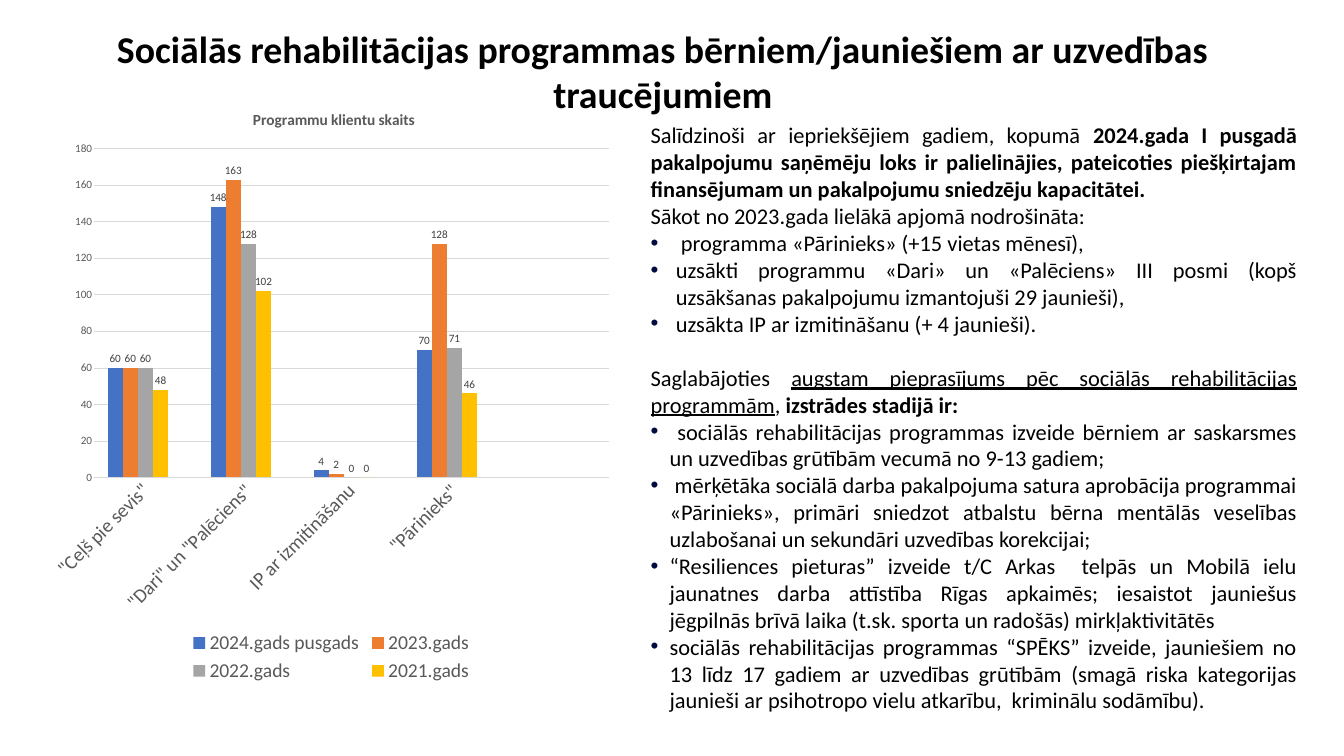
from lxml import etree
from pptx import Presentation
from pptx.chart.data import CategoryChartData
from pptx.dml.color import RGBColor
from pptx.enum import chart as kinds, text
from pptx.oxml import ns
from pptx.util import Pt

FONT = "Calibri"
COLOURS = {"ink": "000000", "bullet": "000B40", "grey": "595959", "label": "404040",
           "grid": "D9D9D9"}
PAGE_SIZE = (1920, 1080)
TITLE_BOX = (96, 32.4, 1702, 138.2)
BODY_BOX = (922.3, 169.9, 938.2, 887)
CHART_BOX = (59.8, 126.7, 826.6, 854.6)
BODY_SIZE = 32
LINE_HEIGHT = 39

TITLE = "Sociālās rehabilitācijas programmas bērniem/jauniešiem ar uzvedības traucējumiem"
CHART_TITLE = "Programmu klientu skaits"
CATEGORIES = ['"Ceļš pie sevis"', '"Dari" un "Palēciens"', "IP ar izmitināšanu", '"Pārinieks"', ""]
SERIES = [
    ("2024.gads pusgads", [60, 148, 4, 70, None], "4472C4"),
    ("2023.gads", [60, 163, 2, 128, None], "ED7D31"),
    ("2022.gads", [60, 128, 0, 71, None], "A5A5A5"),
    ("2021.gads", [48, 102, 0, 46, None], "FFC000"),
    ("", [None] * 5, "5B9BD5"),
]
TITLE_PLACE = {"x": 0.36, "y": 0.03}
PLOT_PLACE = {"x": 0.09, "y": 0.1, "w": 0.89, "h": 0.55}
LEGEND_PLACE = {"x": 0.25, "y": 0.9, "w": 0.5, "h": 0.1}

# indent, space before, runs of (words, style)
PARAGRAPHS = [
    (0, 0, [("Salīdzinoši ar iepriekšējiem gadiem, kopumā ", ""),
            ("2024.gada I pusgadā pakalpojumu saņēmēju loks ir palielinājies, pateicoties "
             "piešķirtajam finansējumam un pakalpojumu sniedzēju kapacitātei. ", "bold")]),
    (0, 0, [("Sākot no 2023.gada lielākā apjomā nodrošināta:", "")]),
    (36, 0, [(" programma «Pārinieks» (+15 vietas mēnesī), ", "")]),
    (36, 0, [("uzsākti programmu «Dari» un «Palēciens» III posmi (kopš uzsākšanas "
              "pakalpojumu izmantojuši 29 jaunieši), ", "")]),
    (36, 0, [("uzsākta IP ar izmitināšanu (+ 4 jaunieši).", "")]),
    (0, LINE_HEIGHT, [("Saglabājoties ", ""),
                      ("augstam pieprasījums pēc sociālās rehabilitācijas programmām", "underline"),
                      (", ", ""), ("izstrādes stadijā ir:", "bold")]),
    (27, 0, [(" sociālās rehabilitācijas programmas izveide bērniem ar saskarsmes un "
              "uzvedības grūtībām vecumā no 9-13 gadiem;", "")]),
    (27, 0, [(" mērķētāka sociālā darba pakalpojuma satura aprobācija programmai «Pārinieks», "
              "primāri sniedzot atbalstu bērna mentālās veselības uzlabošanai un sekundāri "
              "uzvedības korekcijai;", "")]),
    (27, 0, [("“Resiliences pieturas” izveide t/C Arkas  telpās un Mobilā ielu jaunatnes darba "
              "attīstība Rīgas apkaimēs; iesaistot jauniešus jēgpilnās brīvā laika (t.sk. sporta "
              "un radošās) mirkļaktivitātēs", "")]),
    (27, 0, [("sociālās rehabilitācijas programmas “SPĒKS” izveide, jauniešiem no 13 līdz 17 "
              "gadiem ar uzvedības grūtībām (smagā riska kategorijas jaunieši ar psihotropo vielu "
              "atkarību,  kriminālu sodāmību).", "")]),
]


def colour(name):
    return RGBColor.from_string(COLOURS[name])


def style(font, size, name, bold=False):
    font.name, font.size, font.bold = FONT, Pt(size), bold
    font.color.rgb = colour(name)


def move(shape, box):
    shape.left, shape.top, shape.width, shape.height = map(Pt, box)
    frame = shape.text_frame
    frame.word_wrap = True
    frame.vertical_anchor = text.MSO_ANCHOR.TOP
    frame.auto_size = text.MSO_AUTO_SIZE.SHAPE_TO_FIT_TEXT
    return frame


def add_run(para, words, size, bold=False, underline=False):
    span = para.add_run()
    span.text = words
    style(span.font, size, "ink", bold)
    if underline:
        span.font.underline = True


def set_bullet(para, indent):
    props = para._p.get_or_add_pPr()
    props.set("marL", str(Pt(indent)))
    props.set("indent", str(-Pt(indent)))
    if not indent:
        etree.SubElement(props, ns.qn("a:buNone"))
        return
    tint = etree.SubElement(props, ns.qn("a:buClr"))
    etree.SubElement(tint, ns.qn("a:srgbClr"), val=COLOURS["bullet"])
    etree.SubElement(props, ns.qn("a:buFont"), typeface="Arial")
    etree.SubElement(props, ns.qn("a:buChar"), char="•")


def place(element, after, places, inner=False):
    for old in element.findall(ns.qn("c:layout")):
        element.remove(old)
    layout = etree.Element(ns.qn("c:layout"))
    manual = etree.SubElement(layout, ns.qn("c:manualLayout"))
    if inner:
        etree.SubElement(manual, ns.qn("c:layoutTarget"), val="inner")
    for key in "xy":
        etree.SubElement(manual, ns.qn(f"c:{key}Mode"), val="edge")
    for key, value in places.items():
        etree.SubElement(manual, ns.qn(f"c:{key}"), val=str(value))
    if after:
        element.find(ns.qn(after)).addnext(layout)
    else:
        element.insert(0, layout)


def add_client_chart(page):
    data = CategoryChartData()
    data.categories = CATEGORIES
    for name, values, _ in SERIES:
        data.add_series(name, values)
    chart = page.shapes.add_chart(kinds.XL_CHART_TYPE.COLUMN_CLUSTERED,
                                  *map(Pt, CHART_BOX), data).chart
    style(chart.font, 16, "ink")
    para = chart.chart_title.text_frame.paragraphs[0]
    para.add_run().text = CHART_TITLE
    style(para.runs[0].font, 22, "grey", True)
    place(chart.chart_title._element, "c:tx", TITLE_PLACE)
    place(chart._chartSpace.chart.plotArea, None, PLOT_PLACE, True)

    plot = chart.plots[0]
    plot.gap_width, plot.overlap, plot.vary_by_categories = 182, 0, False
    for series, (name, _, fill) in zip(plot.series, SERIES):
        series.format.fill.solid()
        series.format.fill.fore_color.rgb = RGBColor.from_string(fill)
        if name:
            labels = series.data_labels
            labels.show_value = True
            labels.position = kinds.XL_LABEL_POSITION.OUTSIDE_END
            style(labels.font, 16, "label")

    for axis, size in ((chart.category_axis, 28), (chart.value_axis, 16)):
        axis.major_tick_mark = axis.minor_tick_mark = kinds.XL_TICK_MARK.NONE
        style(axis.tick_labels.font, size, "grey")
    slant = chart.category_axis._element.find(ns.qn("c:txPr")).find(ns.qn("a:bodyPr"))
    slant.set("rot", "-2700000")
    slant.set("vert", "horz")
    scale = chart.value_axis
    scale.minimum_scale, scale.maximum_scale, scale.major_unit = 0, 180, 20
    scale.format.line.fill.background()
    for line in (chart.category_axis.format.line, scale.major_gridlines.format.line):
        line.color.rgb = colour("grid")
        line.width = Pt(0.75)

    chart.has_legend = True
    legend = chart.legend
    legend.position = kinds.XL_LEGEND_POSITION.BOTTOM
    legend.include_in_layout = False
    style(legend.font, 28, "grey")
    entry = etree.Element(ns.qn("c:legendEntry"))
    etree.SubElement(entry, ns.qn("c:idx"), val=str(len(SERIES) - 1))
    etree.SubElement(entry, ns.qn("c:delete"), val="1")
    legend._element.find(ns.qn("c:legendPos")).addnext(entry)
    place(legend._element, "c:legendEntry", LEGEND_PLACE)


def main():
    deck = Presentation()
    deck.slide_width, deck.slide_height = map(Pt, PAGE_SIZE)
    page = deck.slides.add_slide(deck.slide_layouts[1])
    add_client_chart(page)

    heading = move(page.shapes.title, TITLE_BOX).paragraphs[0]
    heading.alignment = text.PP_ALIGN.CENTER
    add_run(heading, TITLE, 54, bold=True)

    frame = move(page.placeholders[1], BODY_BOX)
    for index, (indent, gap, spans) in enumerate(PARAGRAPHS):
        para = frame.add_paragraph() if index else frame.paragraphs[0]
        para.alignment = text.PP_ALIGN.JUSTIFY
        para.space_before = Pt(gap)
        set_bullet(para, indent)
        for words, look in spans:
            add_run(para, words, BODY_SIZE, look == "bold", look == "underline")
    deck.save("out.pptx")


if __name__ == "__main__":
    main()
